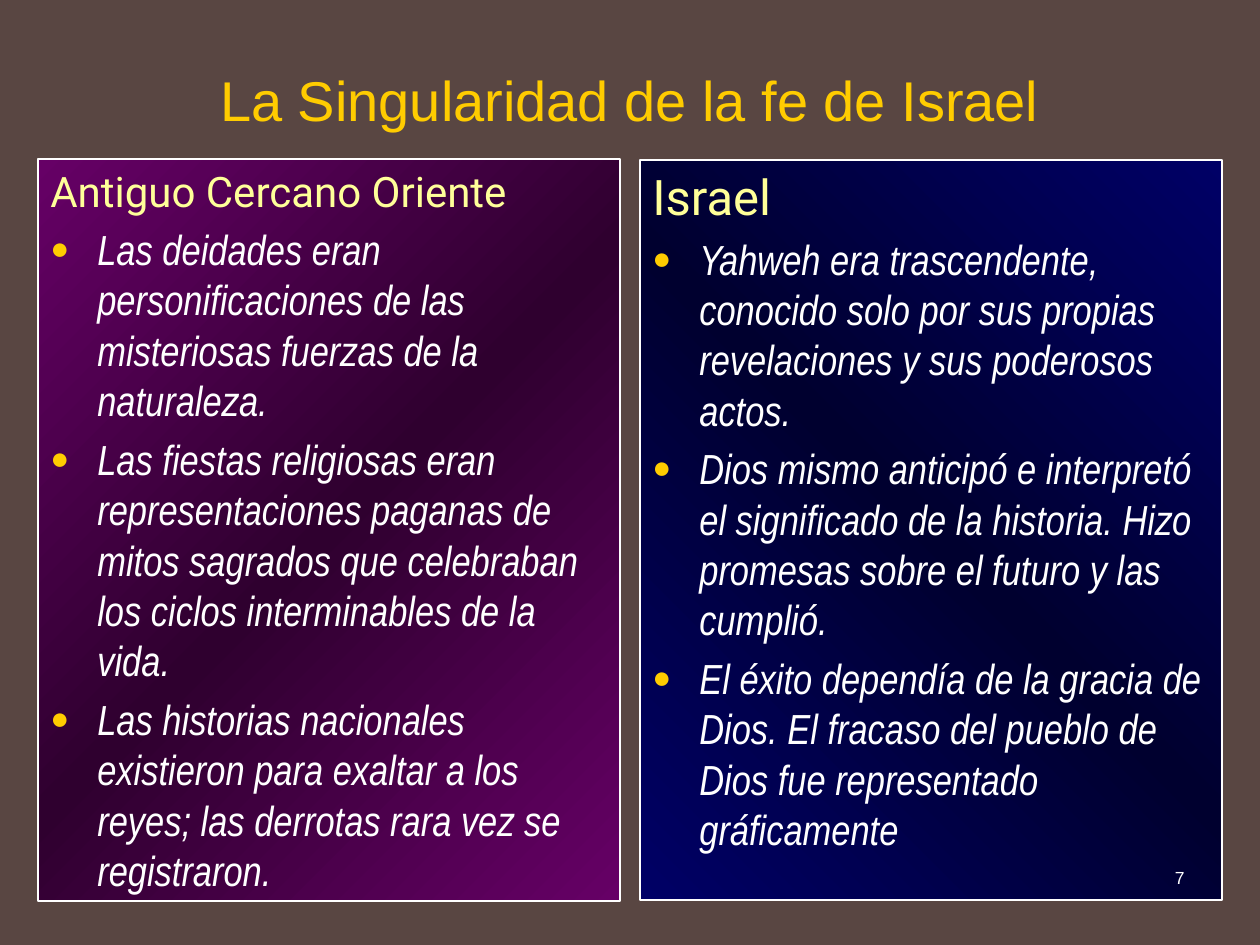
from dataclasses import dataclass

from lxml import etree
from pptx import Presentation
from pptx.dml.color import RGBColor
from pptx.enum.shapes import MSO_SHAPE
from pptx.enum.text import MSO_ANCHOR, PP_ALIGN
from pptx.oxml import parse_xml
from pptx.oxml.ns import nsdecls, qn
from pptx.util import Pt

RECT = MSO_SHAPE.RECTANGLE
TOP, MIDDLE = MSO_ANCHOR.TOP, MSO_ANCHOR.MIDDLE
LEFT, CENTER, RIGHT = PP_ALIGN.LEFT, PP_ALIGN.CENTER, PP_ALIGN.RIGHT
EMU_PER_PX = 914400 / 126


@dataclass(frozen=True)
class Theme:
    background: str = "594642"
    accent: str = "FFCC00"
    heading: str = "FFFF99"
    text: str = "FFFFFF"
    purple: tuple = ("660066", "2F002F", "660066")
    navy: tuple = ("000066", "00002F", "000066")
    sans: str = "Arial"
    narrow: str = "Arial Narrow"
    display: str = "Roboto"
    title_size: int = 32
    body_size: int = 24
    large_size: int = 28
    number_size: int = 10
    gap: float = 4.6
    indent: int = 47


def px(n):
    return round(n * EMU_PER_PX)


class SlideBuilder:
    """Draws themed elements on one slide."""

    def __init__(self, slide, theme):
        self.slide = slide
        self.theme = theme
        fill = slide.background.fill
        fill.solid()
        fill.fore_color.rgb = RGBColor.from_string(theme.background)

    def style(self, p, size, font, color, italic=False):
        for r in p.runs:
            r.font.size = Pt(size)
            r.font.name = font
            r.font.italic = italic
            r.font.color.rgb = RGBColor.from_string(color)

    def label(self, box, text, size, color, align, anchor=TOP):
        sp = self.slide.shapes.add_textbox(*map(px, box))
        tf = sp.text_frame
        tf.word_wrap = True
        tf.vertical_anchor = anchor
        tf.text = text
        p = tf.paragraphs[0]
        p.alignment = align
        self.style(p, size, self.theme.sans, color)

    def gradient(self, sp, colors, angle):
        stops = "".join(
            f'<a:gs pos="{i * 50000}"><a:srgbClr val="{c}"/></a:gs>'
            for i, c in enumerate(colors))
        sp.fill.background()
        old = sp._element.spPr.find(qn("a:noFill"))
        new = parse_xml(
            f'<a:gradFill {nsdecls("a")} rotWithShape="1"><a:gsLst>{stops}</a:gsLst>'
            f'<a:lin ang="{angle * 60000}" scaled="0"/></a:gradFill>')
        old.getparent().replace(old, new)

    def bullet(self, p):
        pPr = p._p.get_or_add_pPr()
        pPr.set("marL", str(px(self.theme.indent)))
        pPr.set("indent", str(-px(self.theme.indent)))
        color = etree.SubElement(pPr, qn("a:buClr"))
        etree.SubElement(color, qn("a:srgbClr")).set("val", self.theme.accent)
        etree.SubElement(pPr, qn("a:buSzPct")).set("val", "75000")
        etree.SubElement(pPr, qn("a:buFont")).set("typeface", self.theme.sans)
        etree.SubElement(pPr, qn("a:buChar")).set("char", "●")

    def panel(self, box, colors, angle, heading, heading_size, points):
        t = self.theme
        sp = self.slide.shapes.add_shape(RECT, *map(px, box))
        sp.shadow.inherit = False
        self.gradient(sp, colors, angle)
        sp.line.color.rgb = RGBColor.from_string(t.text)
        sp.line.width = Pt(0.75)
        tf = sp.text_frame
        tf.word_wrap = True
        tf.vertical_anchor = TOP
        tf.text = "\n".join([heading, *points])
        first, *rest = tf.paragraphs
        for p in tf.paragraphs:
            p.alignment = LEFT
            p.space_before = Pt(t.gap)
        self.style(first, heading_size, t.display, t.heading)
        for p in rest:
            self.bullet(p)
            self.style(p, t.body_size, t.narrow, t.text, italic=True)


def main():
    theme = Theme()
    prs = Presentation()
    prs.slide_width, prs.slide_height = px(1260), px(945)
    s = SlideBuilder(prs.slides.add_slide(prs.slide_layouts[6]), theme)

    s.label((68, 44, 1124, 111), "La Singularidad de la fe de Israel",
            theme.title_size, theme.accent, CENTER, MIDDLE)
    s.panel((38, 159, 582, 742), theme.purple, 45,
            "Antiguo Cercano Oriente", theme.body_size, [
                "Las deidades eran personificaciones de las misteriosas fuerzas "
                "de la naturaleza.",
                "Las fiestas religiosas eran representaciones paganas de mitos "
                "sagrados que celebraban los ciclos interminables de la vida.",
                "Las historias nacionales existieron para exaltar a los reyes; "
                "las derrotas rara vez se registraron."])
    s.panel((640, 160, 582, 740), theme.navy, 315,
            "Israel", theme.large_size, [
                "Yahweh era trascendente, conocido solo por sus propias "
                "revelaciones y sus poderosos actos.",
                "Dios mismo anticipó e interpretó el significado de la historia. "
                "Hizo promesas sobre el futuro y las cumplió.",
                "El éxito dependía de la gracia de Dios. El fracaso del pueblo "
                "de Dios fue representado gráficamente"])
    s.label((903, 861, 294, 63), "7", theme.number_size, theme.text, RIGHT)

    prs.save("out.pptx")


if __name__ == "__main__":
    main()
